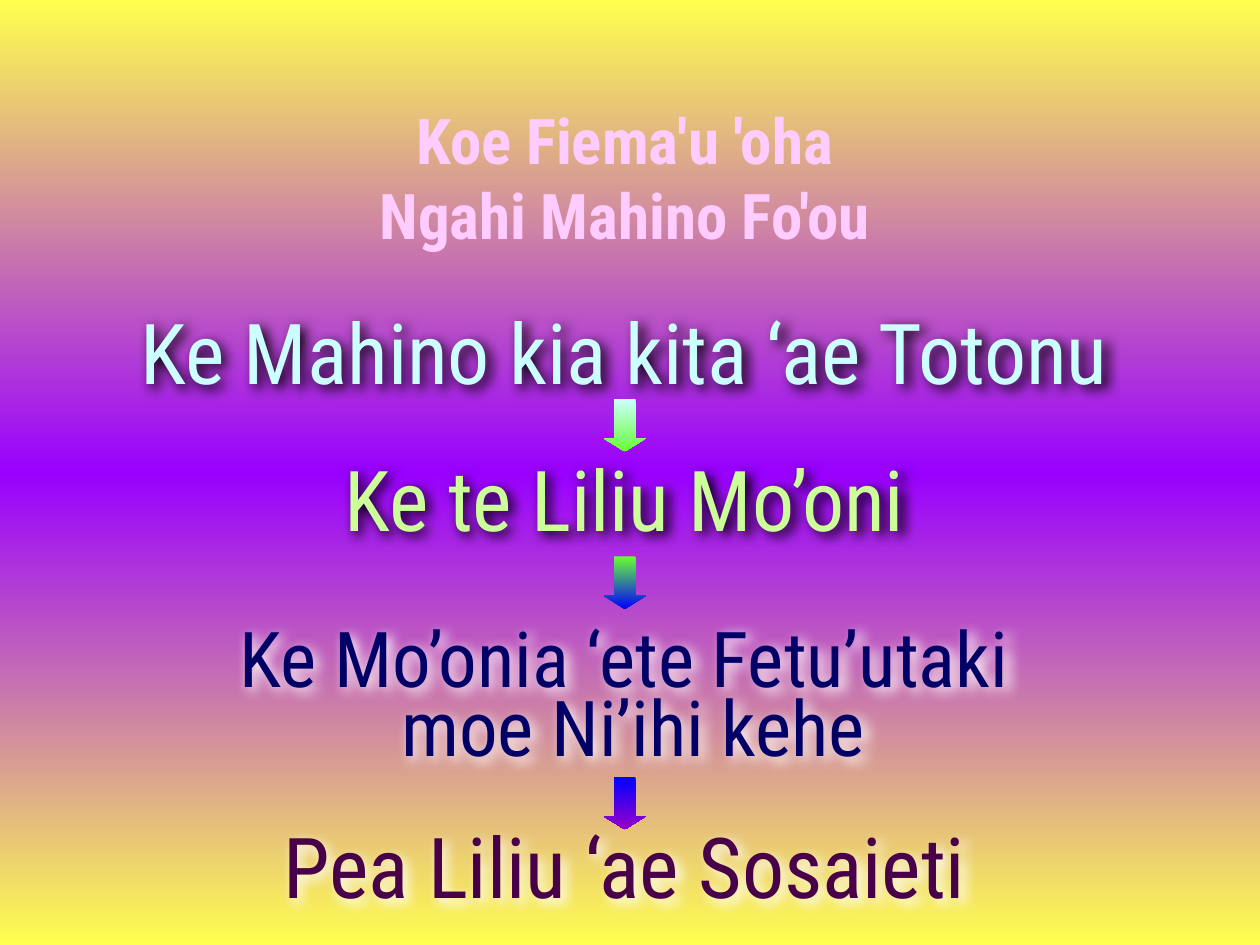
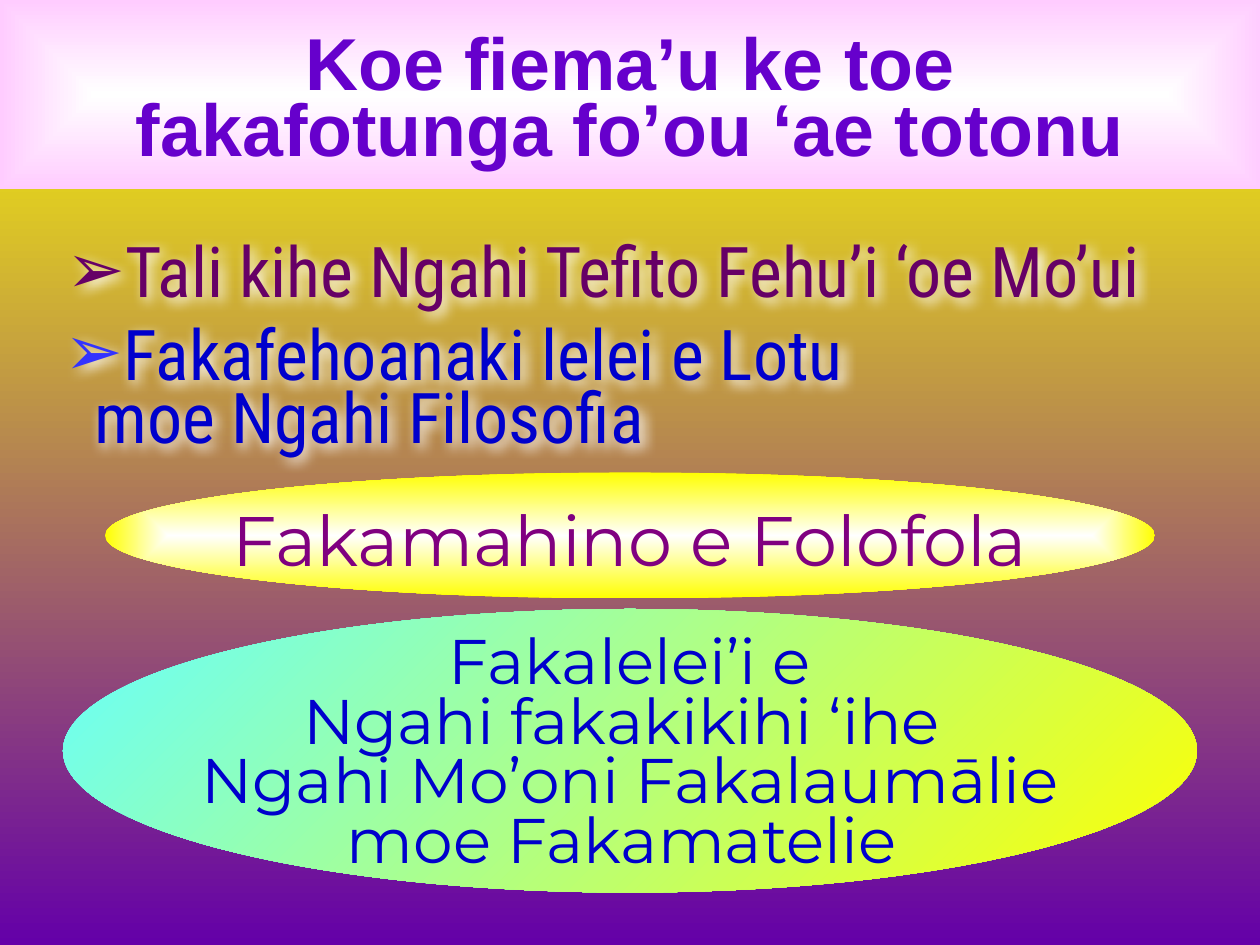
"""Build two slides on the need for a new understanding."""
from dataclasses import dataclass

from lxml.etree import SubElement
from pptx import Presentation
from pptx.dml.color import RGBColor
from pptx.enum.shapes import MSO_SHAPE as Preset
from pptx.enum.text import MSO_ANCHOR as Anchor, PP_ALIGN as Align
from pptx.oxml.ns import qn
from pptx.util import Pt


@dataclass(frozen=True)
class Theme:
    condensed: str = "Roboto Condensed"
    rounded: str = "Montserrat"
    plain: str = "Arial"
    heading: int = 36
    step: int = 48
    long_step: int = 44
    band: int = 42
    point: int = 40
    pink: str = "FFCCFF"
    white: str = "FFFFFF"
    black: str = "000000"
    ice: str = "CCFFFF"
    lime: str = "CCFF99"
    green: str = "66FF33"
    blue: str = "0000FF"
    violet: str = "9900CC"
    navy: str = "000066"
    plum: str = "480048"
    purple: str = "6600CC"
    ink: str = "0000CC"
    magenta: str = "800080"
    wine: str = "660066"
    bullet_blue: str = "3333FF"
    yellow: str = "FFFF00"
    aqua: str = "66FFFF"
    sunrise: tuple = ("FFFF4F", "9900FF", "FFFF4F")
    dusk: tuple = ("FFFF00", "6400A8")


def paint(owner, fill, colors, angle=None):
    fill.gradient()
    gradient = owner.element.xpath(".//a:gradFill")[0]
    for child in list(gradient):
        gradient.remove(child)
    stops = SubElement(gradient, qn("a:gsLst"))
    for index, color in enumerate(colors):
        position = 100000 * index // (len(colors) - 1)
        stop = SubElement(stops, qn("a:gs"), pos=str(position))
        SubElement(stop, qn("a:srgbClr"), val=color)
    if angle is None:
        center = SubElement(gradient, qn("a:path"), path="shape")
        SubElement(center, qn("a:fillToRect"), l="50000", t="50000", r="50000", b="50000")
    else:
        SubElement(gradient, qn("a:lin"), ang=str(angle * 60000), scaled="0")


def write(box, lines, font, size, color, spacing=1.0, align=Align.CENTER,
          anchor=Anchor.MIDDLE, bold=False, glow=None, drop=0, wrap=True):
    frame = box.text_frame
    frame.word_wrap = wrap
    frame.vertical_anchor = anchor
    frame.margin_top = Pt(3.6 + drop)
    for index, line in enumerate(lines):
        para = frame.paragraphs[0] if index == 0 else frame.add_paragraph()
        para.alignment = align
        para.line_spacing = spacing
        span = para.add_run()
        span.text = line
        span.font.name = font
        span.font.size = Pt(size)
        span.font.bold = bold
        span.font.color.rgb = RGBColor.from_string(color)
    if glow:
        box.shadow.inherit = False
        effects = box.element.spPr.find(qn("a:effectLst"))
        shadow = SubElement(effects, qn("a:outerShdw"), blurRad=str(Pt(7)),
                            dist=str(Pt(3)), dir="2700000", algn="ctr")
        SubElement(shadow, qn("a:srgbClr"), val=glow)


theme = Theme()
deck = Presentation()
deck.slide_width, deck.slide_height = Pt(720), Pt(540)
blank = deck.slide_layouts[6]

page = deck.slides.add_slide(blank)
paint(page, page.background.fill, theme.sunrise, 90)

steps = [
    ((66, 168, 582, 65), ["Ke Mahino kia kita ‘ae Totonu"], theme.step, theme.ice, 1, theme.black),
    ((183, 252, 348, 65), ["Ke te Liliu Mo’oni"], theme.step, theme.lime, 1, theme.black),
    ((123, 357.5, 468, 86), ["Ke Mo’onia ‘ete Fetu’utaki", " moe Ni’ihi kehe"],
     theme.long_step, theme.navy, 0.75, theme.white),
    ((144, 462, 426, 65), ["Pea Liliu ‘ae Sosaieti"], theme.step, theme.plum, 1, theme.white),
]
for place, lines, size, color, spacing, glow in steps:
    box = page.shapes.add_textbox(*map(Pt, place))
    write(box, lines, theme.condensed, size, color, spacing, anchor=Anchor.TOP, glow=glow)

heading = page.shapes.add_textbox(Pt(30), Pt(53), Pt(654), Pt(96))
write(heading, ["Koe Fiema'u 'oha", "Ngahi Mahino Fo'ou"], theme.condensed,
      theme.heading, theme.pink, bold=True)

arrow_colors = (theme.ice, theme.green, theme.blue, theme.violet)
for top, colors in zip((228, 318, 444), zip(arrow_colors, arrow_colors[1:])):
    arrow = page.shapes.add_shape(Preset.DOWN_ARROW, Pt(345), Pt(top), Pt(24), Pt(30))
    arrow.adjustments[0], arrow.adjustments[1] = 0.5, 0.31
    arrow.shadow.inherit = False
    arrow.line.fill.background()
    paint(arrow, arrow.fill, colors, 90)

page = deck.slides.add_slide(blank)
paint(page, page.background.fill, theme.dusk, 90)

ovals = [
    ((60, 270, 600, 72), (theme.white, theme.yellow), None, ["Fakamahino e Folofola"],
     theme.point, theme.magenta, 1, 3),
    ((36, 348, 648, 162), (theme.aqua, theme.yellow), 45,
     ["Fakalelei’i e", "Ngahi fakakikihi ‘ihe ", "Ngahi Mo’oni Fakalaumālie", "moe Fakamatelie "],
     theme.heading, theme.ink, 0.79, 6),
]
for place, colors, angle, lines, size, color, spacing, drop in ovals:
    oval = page.shapes.add_shape(Preset.OVAL, *map(Pt, place))
    oval.shadow.inherit = False
    oval.line.fill.background()
    paint(oval, oval.fill, colors, angle)
    write(oval, lines, theme.rounded, size, color, spacing, drop=drop, wrap=False)

band = page.shapes.add_group_shape()
panel = band.shapes.add_shape(Preset.RECTANGLE, Pt(0), Pt(0), Pt(720), Pt(108))
panel.shadow.inherit = False
panel.line.fill.background()
paint(panel, panel.fill, (theme.white, theme.pink))
title = band.shapes.add_textbox(Pt(0), Pt(9.5), Pt(720), Pt(90.5))
write(title, ["Koe fiema’u ke toe", "fakafotunga fo’ou ‘ae totonu"], theme.plain,
      theme.band, theme.purple, 0.75, bold=True, drop=9)

points = [
    ((31, 126, 641, 55.5), "Tali kihe Ngahi Tefito Fehu’i ‘oe Mo’ui", theme.wine, theme.wine, 1),
    ((30, 185, 485, 79), "Fakafehoanaki lelei e Lotu moe Ngahi Filosofia",
     theme.ink, theme.bullet_blue, 0.75),
]
for place, line, color, bullet_color, spacing in points:
    box = page.shapes.add_textbox(*map(Pt, place))
    write(box, [line], theme.condensed, theme.point, color, spacing, Align.LEFT, glow=theme.white)
    layout = box.text_frame.paragraphs[0]._p.get_or_add_pPr()
    layout.set("marL", str(Pt(17)))
    layout.set("indent", str(-Pt(17)))
    tint = SubElement(layout, qn("a:buClr"))
    SubElement(tint, qn("a:srgbClr"), val=bullet_color)
    SubElement(layout, qn("a:buFont"), typeface=theme.plain)
    SubElement(layout, qn("a:buChar"), char="➢")

deck.save("out.pptx")
